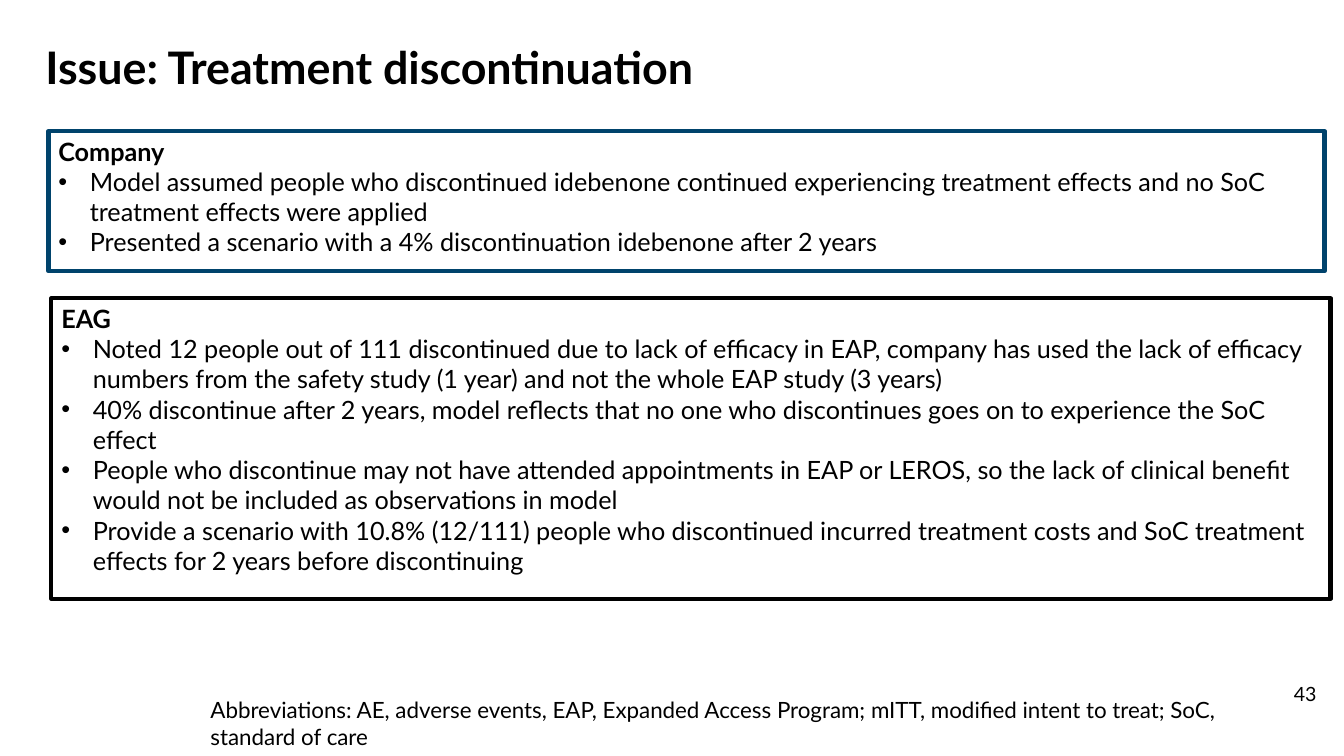
from lxml.etree import SubElement
from pptx import Presentation
from pptx.dml.color import RGBColor
from pptx.enum.shapes import MSO_SHAPE as Preset
from pptx.enum.text import MSO_ANCHOR as Anchor, MSO_AUTO_SIZE as AutoSize, PP_ALIGN as Align
from pptx.oxml.ns import qn
from pptx.util import Pt

FONT = "Lato"
BLACK, WHITE, NAVY = "000000", "FFFFFF", "00436C"
COMPANY_POINTS = [
    "Model assumed people who discontinued idebenone continued experiencing treatment effects "
    "and no SoC treatment effects were applied",
    "Presented a scenario with a 4% discontinuation idebenone after 2 years",
]
EAG_POINTS = [
    "Noted 12 people out of 111 discontinued due to lack of efficacy in EAP, company has used "
    "the lack of efficacy numbers from the safety study (1 year) and not the whole EAP study (3 years)",
    "40% discontinue after 2 years, model reflects that no one who discontinues goes on to "
    "experience the SoC effect",
    "People who discontinue may not have attended appointments in EAP or LEROS, so the lack of "
    "clinical benefit would not be included as observations in model",
    "Provide a scenario with 10.8% (12/111) people who discontinued incurred treatment costs "
    "and SoC treatment effects for 2 years before discontinuing",
]
ABBREVIATIONS = ("Abbreviations: AE, adverse events, EAP, Expanded Access Program; "
                 "mITT, modified intent to treat; SoC, standard of care")


def colour(hex_code):
    """Turn a hex string into a colour."""
    return RGBColor.from_string(hex_code)


def points(*lengths):
    """Turn plain numbers into lengths in points."""
    return [Pt(length) for length in lengths]


def style(paragraph, size, bold=False, align=Align.LEFT):
    """Format a paragraph and its runs."""
    paragraph.alignment = align
    for run in paragraph.runs:
        run.font.name = FONT
        run.font.size = Pt(size)
        run.font.bold = bold
        run.font.color.rgb = colour(BLACK)


def add_bullet(paragraph):
    """Give a paragraph a round bullet with a hanging indent."""
    properties = paragraph._p.get_or_add_pPr()
    properties.set("marL", str(Pt(22.5)))
    properties.set("indent", str(-Pt(22.5)))
    SubElement(properties, qn("a:buFont"), typeface="Arial")
    SubElement(properties, qn("a:buChar"), char="•")


def set_title(slide, text):
    """Place and format the slide title."""
    title = slide.shapes.title
    title.left, title.top, title.width, title.height = points(25.2, 28.8, 866.9, 44.6)
    frame = title.text_frame
    frame.text = text
    frame.vertical_anchor = Anchor.TOP
    frame.auto_size = AutoSize.NONE
    frame.paragraphs[0].line_spacing = 0.9
    style(frame.paragraphs[0], 32, bold=True)


def add_panel(slide, box, heading, statements, outline, fill=None):
    """Add an outlined panel with a bold heading and bulleted statements."""
    panel = slide.shapes.add_shape(Preset.RECTANGLE, *points(*box))
    panel.shadow.inherit = False
    panel.line.color.rgb = colour(outline)
    panel.line.width = Pt(3)
    if fill:
        panel.fill.solid()
        panel.fill.fore_color.rgb = colour(fill)
    else:
        panel.fill.background()
    frame = panel.text_frame
    frame.word_wrap = True
    frame.vertical_anchor = Anchor.TOP
    frame.text = "\n".join([heading, *statements])
    first, *rest = frame.paragraphs
    style(first, 18, bold=True)
    for paragraph in rest:
        add_bullet(paragraph)
        style(paragraph, 18)


def add_note(slide, box, text, size, align=Align.LEFT):
    """Add a plain text box."""
    frame = slide.shapes.add_textbox(*points(*box)).text_frame
    frame.word_wrap = True
    frame.text = text
    style(frame.paragraphs[0], size, align=align)


def main():
    """Build and save the slide."""
    deck = Presentation()
    deck.slide_width, deck.slide_height = points(960, 540)
    slide = deck.slides.add_slide(deck.slide_layouts.get_by_name("Title Only"))
    set_title(slide, "Issue: Treatment discontinuation")
    add_panel(slide, (34.6, 93.6, 911.5, 100.1), "Company", COMPANY_POINTS, NAVY)
    add_panel(slide, (36.7, 213.1, 913.7, 214.6), "EAG", EAG_POINTS, BLACK, WHITE)
    add_note(slide, (143.3, 493.9, 748.8, 46.1), ABBREVIATIONS, 16)
    add_note(slide, (910.8, 483.8, 36.7, 28.8), "43", 14, Align.RIGHT)
    deck.save("out.pptx")


if __name__ == "__main__":
    main()
